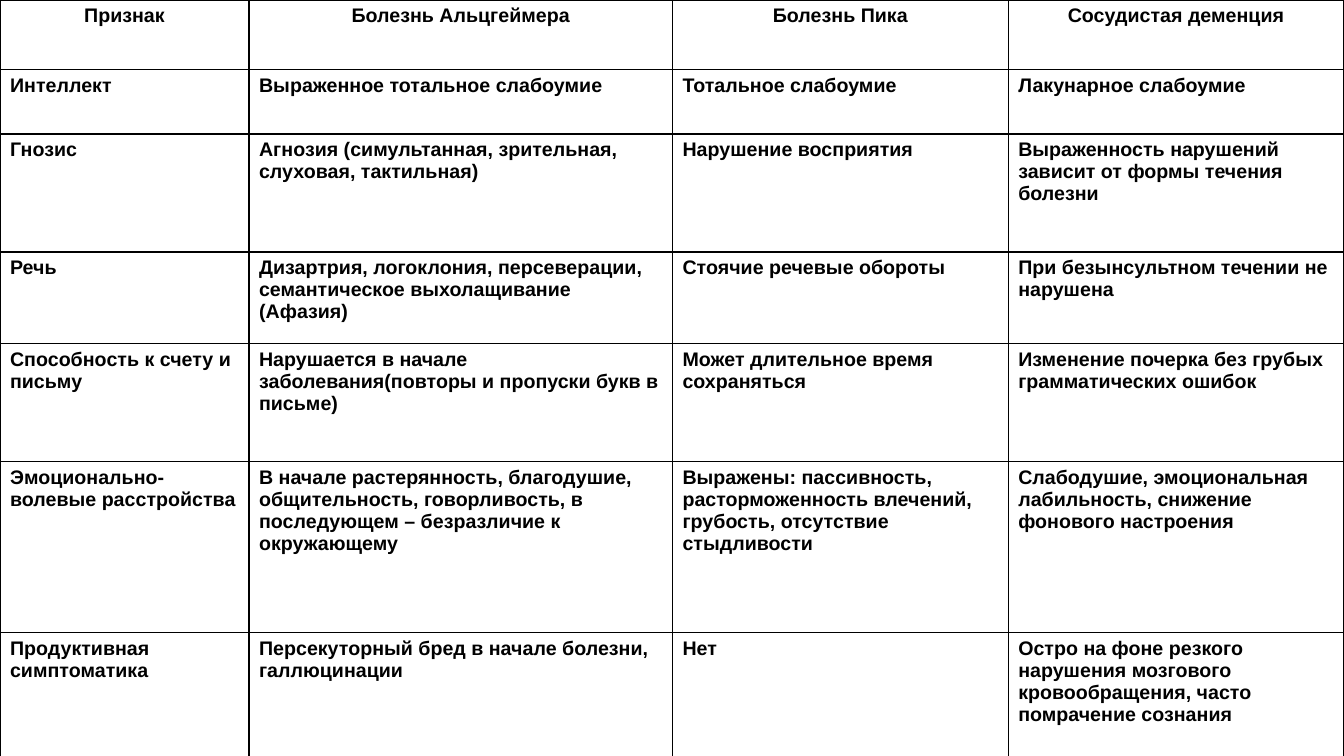
from dataclasses import dataclass

from lxml import etree
from pptx import Presentation
from pptx.dml.color import RGBColor
from pptx.enum.text import PP_ALIGN
from pptx.oxml.ns import qn
from pptx.table import _Cell
from pptx.util import Inches, Pt

CENTER = PP_ALIGN.CENTER
LEFT = PP_ALIGN.LEFT
BLACK = "000000"
INNER_LINE = 1
OUTER_LINE = 2.25
COLUMN_WIDTHS = (2.47, 4.2, 3.33, 3.33)


@dataclass(frozen=True)
class Feature:
    height: float
    name: str
    alzheimer: str
    pick: str
    vascular: str

    def texts(self) -> tuple[str, ...]:
        return self.name, self.alzheimer, self.pick, self.vascular


FEATURES = (
    Feature(0.69, "Признак", "Болезнь Альцгеймера", "Болезнь Пика", "Сосудистая деменция"),
    Feature(0.64, "Интеллект", "Выраженное тотальное слабоумие",
            "Тотальное слабоумие", "Лакунарное слабоумие"),
    Feature(1.17, "Гнозис", "Агнозия (симультанная, зрительная, слуховая, тактильная)",
            "Нарушение восприятия",
            "Выраженность нарушений зависит от формы течения болезни"),
    Feature(0.91, "Речь",
            "Дизартрия, логоклония, персеверации, семантическое выхолащивание (Афазия)",
            "Стоячие речевые обороты", "При безынсультном течении не нарушена"),
    Feature(1.17, "Способность к счету и письму",
            "Нарушается в начале заболевания(повторы и пропуски букв в письме)",
            "Может длительное время сохраняться",
            "Изменение почерка без грубых грамматических ошибок"),
    Feature(1.7, "Эмоционально-волевые расстройства",
            "В начале растерянность, благодушие, общительность, говорливость, "
            "в последующем – безразличие к окружающему",
            "Выражены: пассивность, расторможенность влечений, грубость, отсутствие стыдливости",
            "Слабодушие, эмоциональная лабильность, снижение фонового настроения"),
    Feature(1.27, "Продуктивная симптоматика",
            "Персекуторный бред в начале болезни, галлюцинации", "Нет",
            "Остро на фоне резкого нарушения мозгового кровообращения, часто помрачение сознания"),
)


def color(value: str) -> RGBColor:
    return RGBColor.from_string(value)


def write_text(cell: _Cell, text: str, alignment: PP_ALIGN) -> None:
    paragraph = cell.text_frame.paragraphs[0]
    paragraph.alignment = alignment
    spacing = etree.SubElement(paragraph._p.get_or_add_pPr(), qn("a:spcBef"))
    etree.SubElement(spacing, qn("a:spcPct"), val="20000")
    run = paragraph.add_run()
    run.text = text
    run.font.name = "Arial"
    run.font.size = Pt(14)
    run.font.bold = True
    run.font.color.rgb = color(BLACK)


def draw_borders(cell: _Cell, outer_sides: dict[str, bool]) -> None:
    properties = cell._tc.get_or_add_tcPr()
    for position, (side, is_outer) in enumerate(outer_sides.items()):
        width = Pt(OUTER_LINE if is_outer else INNER_LINE)
        border = etree.Element(qn(f"a:ln{side}"), w=str(width))
        fill = etree.SubElement(border, qn("a:solidFill"))
        etree.SubElement(fill, qn("a:srgbClr"), val=BLACK)
        properties.insert(position, border)


def main() -> None:
    presentation = Presentation()
    presentation.slide_width = Inches(13.33)
    presentation.slide_height = Inches(7.5)
    slide = presentation.slides.add_slide(presentation.slide_layouts[6])

    last_row = len(FEATURES) - 1
    last_column = len(COLUMN_WIDTHS) - 1
    comparison = slide.shapes.add_table(
        len(FEATURES), len(COLUMN_WIDTHS), Inches(0), Inches(0),
        Inches(sum(COLUMN_WIDTHS)), Inches(sum(feature.height for feature in FEATURES)),
    ).table
    comparison.first_row = False
    comparison.horz_banding = False

    for column, width in enumerate(COLUMN_WIDTHS):
        comparison.columns[column].width = Inches(width)
    for row, feature in enumerate(FEATURES):
        comparison.rows[row].height = Inches(feature.height)
        for column, text in enumerate(feature.texts()):
            cell = comparison.cell(row, column)
            cell.fill.background()
            write_text(cell, text, CENTER if row == 0 else LEFT)
            draw_borders(cell, {
                "L": column == 0,
                "R": column == last_column,
                "T": row == 0,
                "B": row == last_row,
            })

    presentation.save("out.pptx")


if __name__ == "__main__":
    main()
